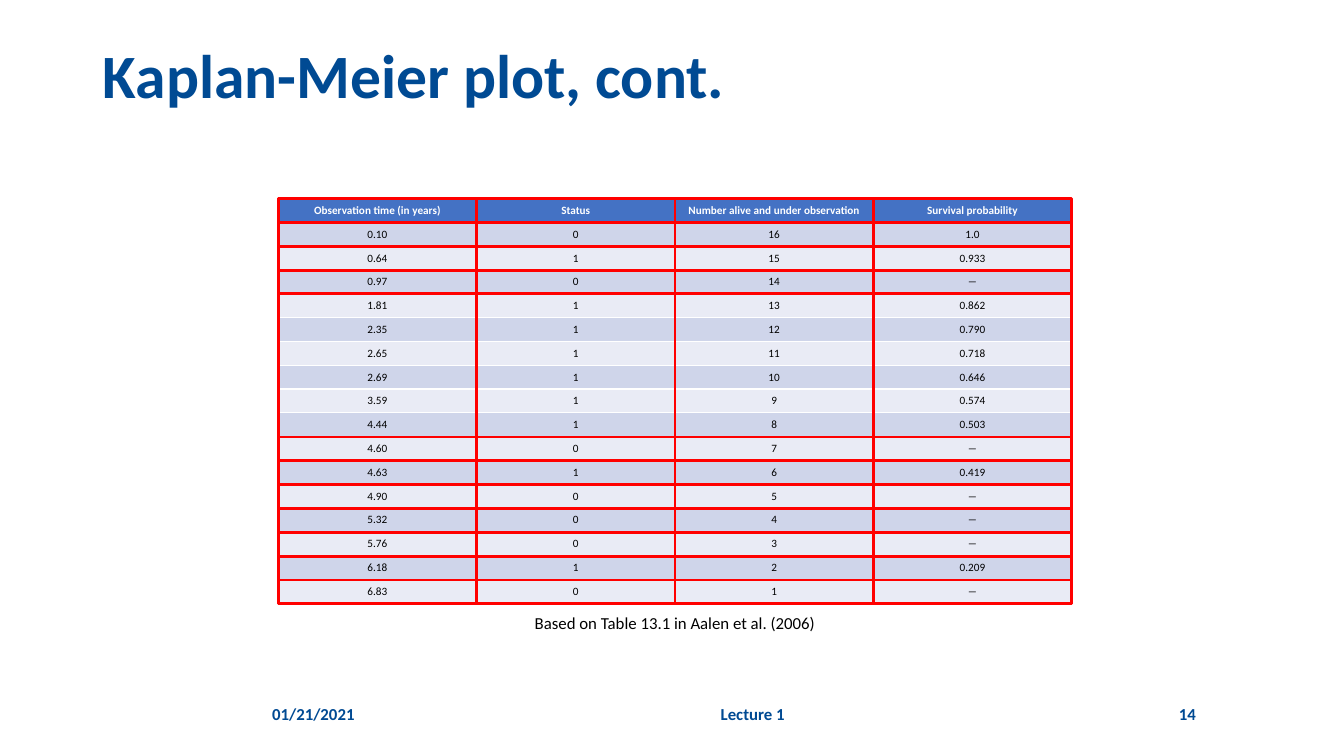
from lxml import etree
from pptx import Presentation
from pptx.dml.color import RGBColor
from pptx.enum.shapes import MSO_SHAPE as Shape
from pptx.enum.text import MSO_ANCHOR as Anchor, MSO_AUTO_SIZE as AutoSize, PP_ALIGN as Align
from pptx.oxml import parse_xml
from pptx.oxml.ns import nsdecls
from pptx.util import Inches, Pt

NAVY = RGBColor(0x00, 0x4A, 0x93)
RED = RGBColor(0xFF, 0x00, 0x00)
BLACK = RGBColor(0x00, 0x00, 0x00)
WHITE = RGBColor(0xFF, 0xFF, 0xFF)
HEADER_BLUE = RGBColor(0x44, 0x72, 0xC4)
BANDS = [RGBColor(0xE9, 0xEB, 0xF5), RGBColor(0xCF, 0xD5, 0xEA)]

HEADINGS = ["Observation time (in years)", "Status",
            "Number alive and under observation", "Survival probability"]
OBSERVATIONS = [
    ("0.10", "0", "16", "1.0"),
    ("0.64", "1", "15", "0.933"),
    ("0.97", "0", "14", "―"),
    ("1.81", "1", "13", "0.862"),
    ("2.35", "1", "12", "0.790"),
    ("2.65", "1", "11", "0.718"),
    ("2.69", "1", "10", "0.646"),
    ("3.59", "1", "9", "0.574"),
    ("4.44", "1", "8", "0.503"),
    ("4.60", "0", "7", "―"),
    ("4.63", "1", "6", "0.419"),
    ("4.90", "0", "5", "―"),
    ("5.32", "0", "4", "―"),
    ("5.76", "0", "3", "―"),
    ("6.18", "1", "2", "0.209"),
    ("6.83", "0", "1", "―"),
]
OUTLINED_ROWS = [1, 3, 10, 11, 12, 13, 14, 16]
LEFT, TOP, WIDTH, HEIGHT = 2.76, 1.97, 7.87, 4.02


def write(frame, text, align, size, color, bold):
    paragraph = frame.paragraphs[0]
    paragraph.alignment = align
    run = paragraph.add_run()
    run.text = text
    run.font.color.rgb = color
    for name, value in {"name": "Calibri", "size": Pt(size), "bold": bold}.items():
        setattr(run.font, name, value)
    return paragraph


def outline(left, top, width, height):
    box = slide.shapes.add_shape(Shape.RECTANGLE, Inches(left), Inches(top),
                                 Inches(width), Inches(height))
    box.shadow.inherit = False
    box.fill.background()
    box.line.color.rgb = RED
    box.line.width = Pt(2)


deck = Presentation()
deck.slide_width, deck.slide_height = Inches(13.33), Inches(7.5)
slide = deck.slides.add_slide(deck.slide_layouts[5])

title = slide.shapes.title
for name, value in {"left": 0.92, "top": 0.4, "width": 11.5, "height": 1.45}.items():
    setattr(title, name, Inches(value))
title.text_frame.auto_size = AutoSize.NONE
title.text_frame.vertical_anchor = Anchor.TOP
heading = write(title.text_frame, "Kaplan-Meier plot, cont.", Align.LEFT, 44, NAVY, True)
heading.line_spacing = 0.9

rows = [HEADINGS, *OBSERVATIONS]
row_height = HEIGHT / len(rows)
column_width = WIDTH / len(HEADINGS)
survival = slide.shapes.add_table(len(rows), len(HEADINGS), Inches(LEFT), Inches(TOP),
                                  Inches(WIDTH), Inches(HEIGHT)).table
for column in survival.columns:
    column.width = Inches(column_width)
for r, values in enumerate(rows):
    survival.rows[r].height = Inches(row_height)
    is_header = r == 0
    borders = {"lnL": 1, "lnR": 1, "lnT": 3 if r == 1 else 1, "lnB": 3 if is_header else 1}
    for c, value in enumerate(values):
        cell = survival.cell(r, c)
        cell.vertical_anchor = Anchor.MIDDLE
        for side, margin in {"left": 0.05, "right": 0.05, "top": 0.02, "bottom": 0.02}.items():
            setattr(cell, f"margin_{side}", Inches(margin))
        properties = cell._tc.get_or_add_tcPr()
        for tag, points in borders.items():
            border = parse_xml(f'<a:{tag} {nsdecls("a")} w="{Pt(points)}"><a:solidFill>'
                               f'<a:srgbClr val="{WHITE}"/></a:solidFill></a:{tag}>')
            properties.append(border)
        cell.fill.solid()
        cell.fill.fore_color.rgb = HEADER_BLUE if is_header else BANDS[r % 2]
        write(cell.text_frame, value, Align.CENTER, 8, WHITE if is_header else BLACK, is_header)

for c in range(len(HEADINGS)):
    outline(LEFT + c * column_width, TOP, column_width, HEIGHT)
for r in OUTLINED_ROWS:
    outline(LEFT, TOP + r * row_height, WIDTH, row_height)

CAPTIONS = [
    ("01/21/2021", 2.6, 6.88, 1.31, 0.4, Align.LEFT, NAVY, True),
    ("Lecture 1", 4.07, 6.88, 6.79, 0.4, Align.CENTER, NAVY, True),
    ("14", 11.02, 6.88, 0.94, 0.4, Align.RIGHT, NAVY, True),
    ("Based on Table 13.1 in Aalen et al. (2006)", 5.12, 5.98, 3.15, 0.39,
     Align.CENTER, BLACK, False),
]
for text, left, top, width, height, align, color, bold in CAPTIONS:
    caption = slide.shapes.add_textbox(Inches(left), Inches(top), Inches(width), Inches(height))
    caption.text_frame.word_wrap = True
    caption.text_frame.vertical_anchor = Anchor.MIDDLE
    write(caption.text_frame, text, align, 12, color, bold)

deck.save("out.pptx")
